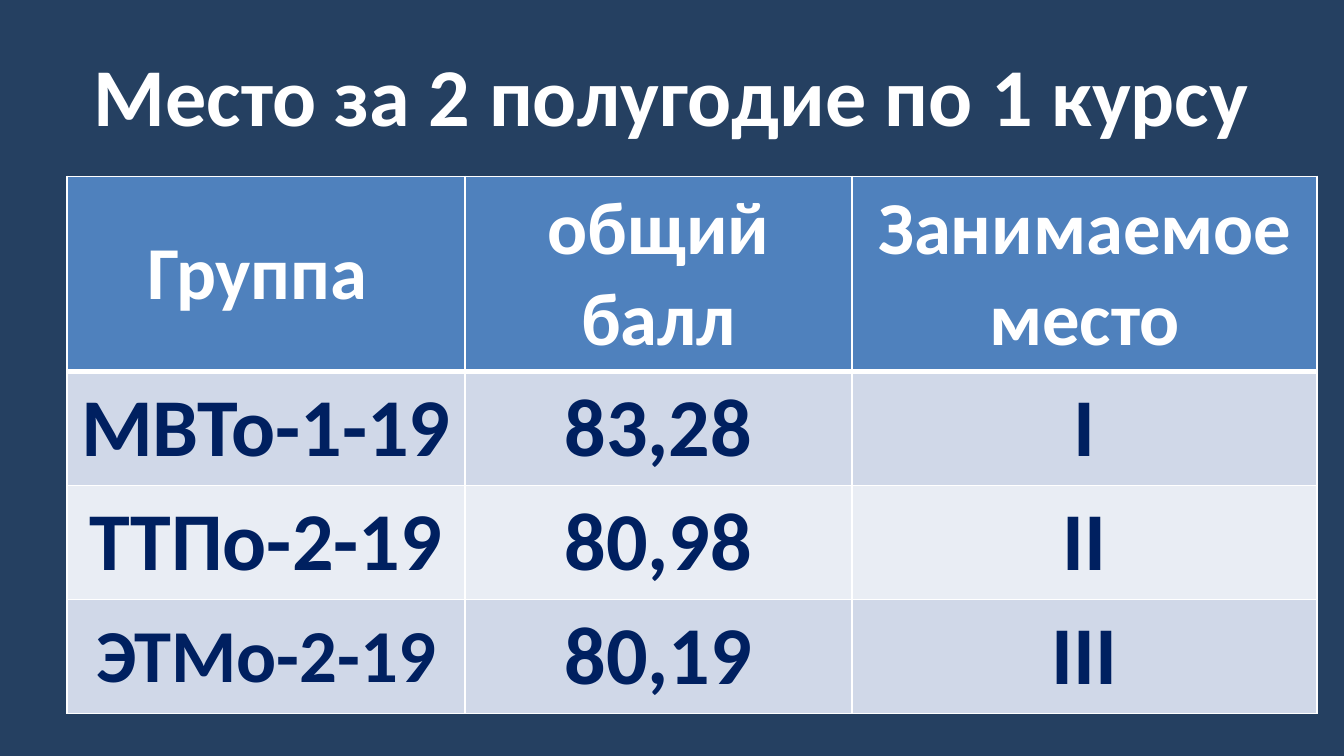
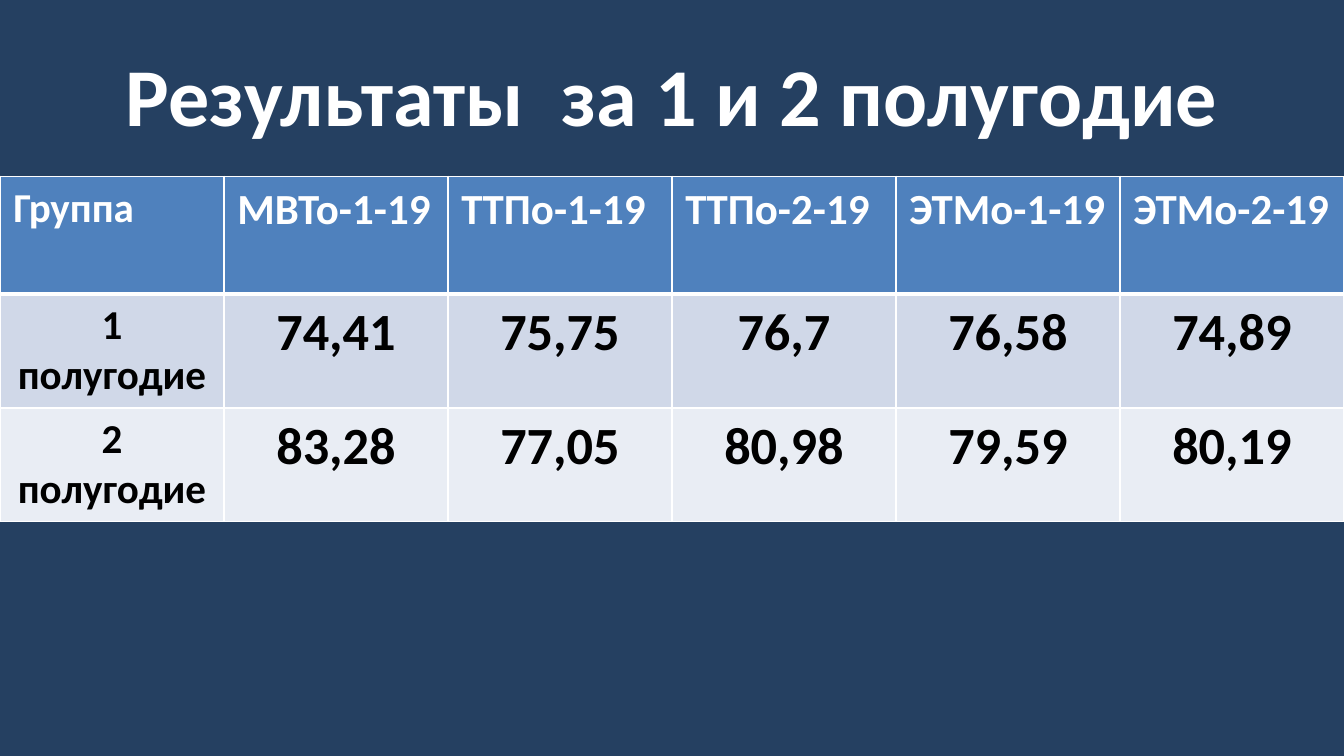
from lxml.etree import SubElement
from pptx import Presentation
from pptx.dml.color import RGBColor as RGB
from pptx.enum.text import MSO_ANCHOR as Anchor, MSO_AUTO_SIZE as AutoSize, PP_ALIGN as Align
from pptx.oxml.ns import qn
from pptx.util import Pt

COLORS = {
    "back": "254061", "white": "FFFFFF", "header": "4F81BD",
    "odd": "D0D8E8", "even": "E9EDF4", "navy": "002060", "black": "000000",
}
FONT = "Calibri"
TABLE_TOP = 94.5


def color(name):
    return RGB.from_string(COLORS[name])


def write(tf, text, size=44, fg="white", align=Align.CENTER):
    """Put one bold formatted paragraph into a text frame."""
    p = tf.paragraphs[0]
    p.alignment = align
    r = p.add_run()
    r.text = text
    r.font.name, r.font.size, r.font.bold = FONT, Pt(size), True
    r.font.color.rgb = color(fg)


def set_borders(cell, top=1, bottom=1):
    """Draw white lines on the four sides; they must precede the fill."""
    tc_pr = cell._tc.get_or_add_tcPr()
    widths = {"L": 1, "R": 1, "T": top, "B": bottom}
    for i, (side, width) in enumerate(widths.items()):
        ln = SubElement(tc_pr, qn(f"a:ln{side}"), w=str(Pt(width)))
        fill = SubElement(ln, qn("a:solidFill"))
        SubElement(fill, qn("a:srgbClr"), val=COLORS["white"])
        tc_pr.insert(i, ln)


class Deck:
    def __init__(self):
        self.prs = Presentation()
        self.prs.slide_width, self.prs.slide_height = Pt(720), Pt(405)
        fill = self.prs.slide_master.background.fill
        fill.solid()
        fill.fore_color.rgb = color("back")
        self.s = None

    def slide(self, title):
        self.s = self.prs.slides.add_slide(self.prs.slide_layouts[5])
        sp = self.s.shapes.title
        sp.left, sp.top, sp.width, sp.height = Pt(36), Pt(16.5), Pt(648), Pt(67.5)
        tf = sp.text_frame
        tf.word_wrap, tf.auto_size = True, AutoSize.NONE
        tf.vertical_anchor = Anchor.MIDDLE
        write(tf, title)

    def table(self, rows, left, widths, heights, anchor, style):
        """Build a banded table; style(row, col) gives the text format."""
        frame = self.s.shapes.add_table(
            len(rows), len(widths), Pt(left), Pt(TABLE_TOP), Pt(sum(widths)), Pt(sum(heights)))
        table = frame.table
        for column, width in zip(table.columns, widths):
            column.width = Pt(width)
        for i, (row, height) in enumerate(zip(rows, heights)):
            table.rows[i].height = Pt(height)
            band = "header" if i == 0 else "odd" if i % 2 else "even"
            for j, text in enumerate(row):
                cell = table.cell(i, j)
                cell.vertical_anchor = anchor
                cell.fill.solid()
                cell.fill.fore_color.rgb = color(band)
                set_borders(cell, top=3 if i == 1 else 1, bottom=3 if i == 0 else 1)
                write(cell.text_frame, text, **style(i, j))


def place_style(row, col):
    if row == 0:
        return {"size": 40}
    return {"size": 40 if (row, col) == (3, 0) else 44, "fg": "navy"}


def result_style(row, col):
    if row == 0:
        return {"size": 23 if col else 22, "align": Align.LEFT}
    return {"size": 28 if col else 22, "fg": "black"}


def main():
    deck = Deck()

    # Places of the first-year groups
    deck.slide("Место за 2 полугодие по 1 курсу")
    deck.table(
        [["Группа ", "общий балл", "Занимаемое место"],
         ["МВТо-1-19", "83,28", "I"],
         ["ТТПо-2-19", "80,98", "II"],
         ["ЭТМо-2-19", "80,19", "III"]],
        left=36, widths=[213.1, 207.4, 249.1], heights=[104] + [61] * 3,
        anchor=Anchor.MIDDLE, style=place_style)

    # Scores of both half-years
    deck.slide("Результаты  за 1 и 2 полугодие")
    deck.table(
        [["Группа", "МВТо-1-19", "ТТПо-1-19", "ТТПо-2-19", "ЭТМо-1-19", "ЭТМо-2-19"],
         ["1 полугодие", "74,41", "75,75", "76,7", "76,58", "74,89"],
         ["2 полугодие", "83,28", "77,05", "80,98", "79,59", "80,19"]],
        left=0, widths=[120] * 6, heights=[63] + [61] * 2,
        anchor=Anchor.TOP, style=result_style)

    deck.prs.save("out.pptx")


if __name__ == "__main__":
    main()
